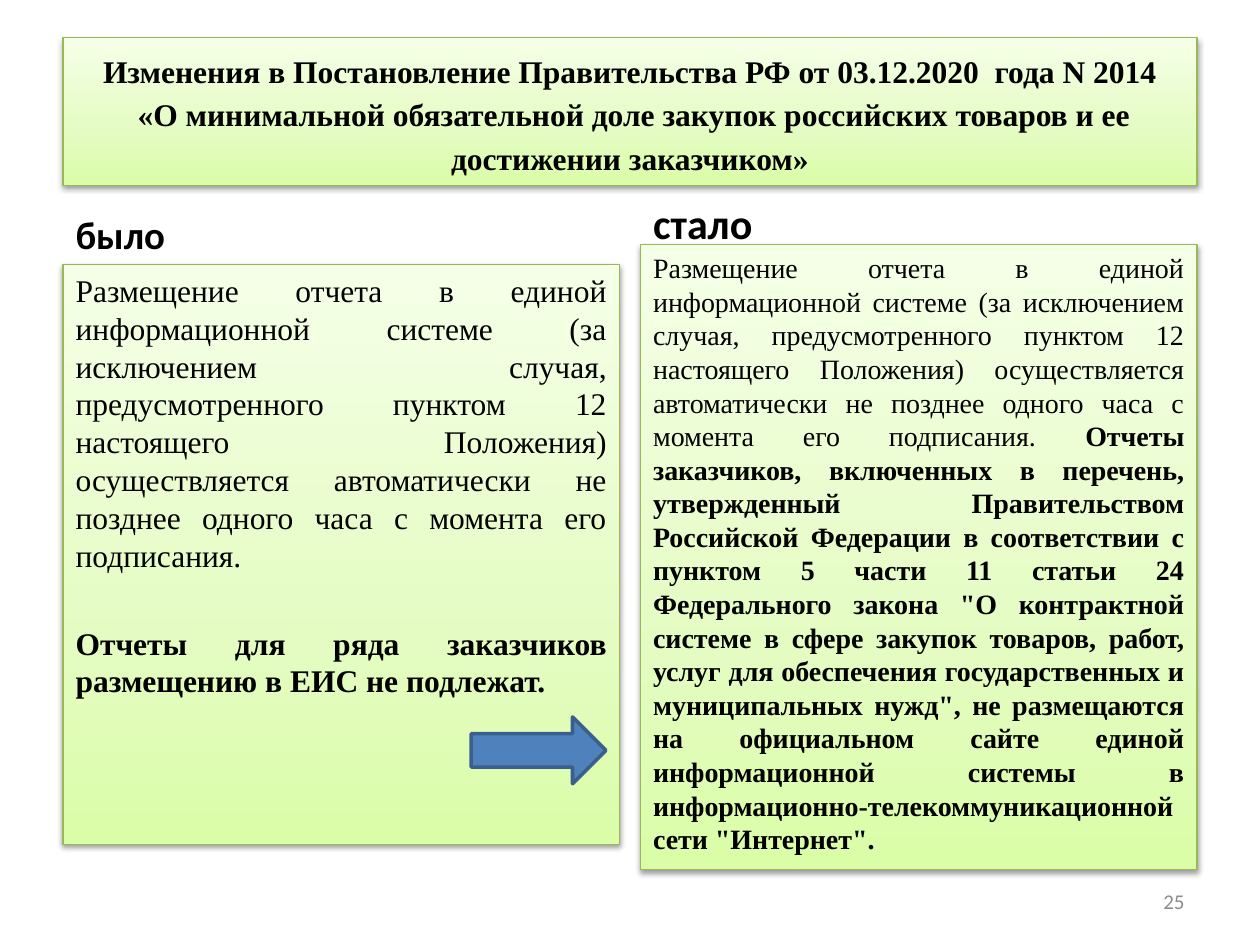
import copy

import lxml.etree
import pptx
import pptx.dml.color
import pptx.enum.shapes
import pptx.enum.text
import pptx.oxml.ns
from pptx.util import Pt

RGBColor = pptx.dml.color.RGBColor
BLACK = RGBColor(0x00, 0x00, 0x00)
GREY = RGBColor(0x8C, 0x8C, 0x8C)
BLUE = RGBColor(0x4F, 0x81, 0xBD)
DARK_BLUE = RGBColor(0x3A, 0x5F, 0x8C)
GREEN_LINE = RGBColor(0x98, 0xB9, 0x55)
GREEN_STOPS = [
    (0, RGBColor(0xDA, 0xFD, 0xA7)),
    (0.35, RGBColor(0xE4, 0xFC, 0xC2)),
    (1, RGBColor(0xF5, 0xFF, 0xE7)),
]

SERIF = "Times New Roman"
SANS = "Calibri"
ALIGN = pptx.enum.text.PP_ALIGN
ANCHOR = pptx.enum.text.MSO_ANCHOR
COMPARISON_LAYOUT = 4

LEFT, RIGHT = 36, 366
COLUMN_WIDTH = 318

TITLE = (
    "Изменения в Постановление Правительства РФ от 03.12.2020  года N 2014\v"
    " «О минимальной обязательной доле закупок российских товаров и ее "
    "достижении заказчиком»"
)
COMMON_RULE = (
    "Размещение отчета в единой информационной системе (за исключением случая, "
    "предусмотренного пунктом 12 настоящего Положения) осуществляется "
    "автоматически не позднее одного часа с момента его подписания."
)
OLD_EXCEPTION = "Отчеты для ряда заказчиков размещению в ЕИС не подлежат."
NEW_EXCEPTION = (
    "Отчеты заказчиков, включенных в перечень, утвержденный Правительством "
    "Российской Федерации в соответствии с пунктом 5 части 11 статьи 24 "
    'Федерального закона "О контрактной системе в сфере закупок товаров, работ, '
    'услуг для обеспечения государственных и муниципальных нужд", не размещаются '
    "на официальном сайте единой информационной системы в "
    'информационно-телекоммуникационной сети "Интернет".'
)


def place(shape, left, top, width, height):
    shape.left, shape.top = Pt(left), Pt(top)
    shape.width, shape.height = Pt(width), Pt(height)


def format_paragraph(paragraph, size, name, alignment, color=BLACK):
    paragraph.alignment = alignment
    paragraph.font.size = Pt(size)
    paragraph.font.name = name
    paragraph.font.color.rgb = color


def prepare_frame(shape, anchor):
    frame = shape.text_frame
    frame.word_wrap = True
    frame.auto_size = pptx.enum.text.MSO_AUTO_SIZE.NONE
    frame.vertical_anchor = anchor
    return frame


def style_green_panel(shape):
    """Give the shape a vertical green gradient, a thin outline and a soft shadow."""
    shape.fill.gradient()
    shape.fill.gradient_angle = 90
    properties = shape._element.spPr
    stop_list = properties.find(".//" + pptx.oxml.ns.qn("a:gsLst"))
    stop_list.append(copy.deepcopy(stop_list[-1]))
    for stop, (position, color) in zip(shape.fill.gradient_stops, GREEN_STOPS):
        stop.position = position
        stop.color.rgb = color
    shape.line.color.rgb = GREEN_LINE
    shape.line.width = Pt(0.75)

    shape.shadow.inherit = False
    qn = pptx.oxml.ns.qn
    shadow = lxml.etree.SubElement(
        properties.find(qn("a:effectLst")), qn("a:outerShdw"),
        blurRad=str(Pt(3.1)), dist=str(Pt(1.6)), dir="5400000", rotWithShape="0")
    color = lxml.etree.SubElement(shadow, qn("a:srgbClr"), val=str(BLACK))
    lxml.etree.SubElement(color, qn("a:alpha"), val="38000")


def remove_bullet(paragraph):
    properties = paragraph._p.get_or_add_pPr()
    properties.set("marL", "0")
    properties.set("indent", "0")
    lxml.etree.SubElement(properties, pptx.oxml.ns.qn("a:buNone"))


def fill_title(shape):
    place(shape, LEFT, 21.6, 648, 84.24)
    style_green_panel(shape)
    paragraph = prepare_frame(shape, ANCHOR.MIDDLE).paragraphs[0]
    paragraph.text = TITLE
    paragraph.line_spacing = 1.15
    format_paragraph(paragraph, 18, SERIF, ALIGN.CENTER)
    paragraph.font.bold = True


def fill_heading(shape, text, left, top, height, size):
    place(shape, left, top, COLUMN_WIDTH, height)
    paragraph = prepare_frame(shape, ANCHOR.BOTTOM).paragraphs[0]
    paragraph.text = text
    format_paragraph(paragraph, size, SANS, ALIGN.LEFT)
    paragraph.font.bold = True


def fill_panel(shape, paragraphs, left, top, height, size):
    """Write paragraphs, each a list of (text, bold) runs, into a green panel."""
    place(shape, left, top, COLUMN_WIDTH, height)
    style_green_panel(shape)
    frame = prepare_frame(shape, ANCHOR.TOP)
    for index, runs in enumerate(paragraphs):
        paragraph = frame.add_paragraph() if index else frame.paragraphs[0]
        if index:
            paragraph.space_before = Pt(28.7)
        for text, bold in runs:
            run = paragraph.add_run()
            run.text = text
            run.font.bold = bold
        remove_bullet(paragraph)
        format_paragraph(paragraph, size, SERIF, ALIGN.JUSTIFY)


def add_page_number(slide, number):
    box = slide.shapes.add_textbox(Pt(516), Pt(500.4), Pt(168), Pt(28.8))
    paragraph = prepare_frame(box, ANCHOR.MIDDLE).paragraphs[0]
    paragraph.text = number
    format_paragraph(paragraph, 12, SANS, ALIGN.RIGHT, GREY)


def add_arrow(slide):
    arrow = slide.shapes.add_shape(
        pptx.enum.shapes.MSO_SHAPE.RIGHT_ARROW,
        Pt(269.3), Pt(409.7), Pt(77), Pt(38.2))
    arrow.shadow.inherit = False
    arrow.fill.solid()
    arrow.fill.fore_color.rgb = BLUE
    arrow.line.color.rgb = DARK_BLUE
    arrow.line.width = Pt(2)


def main():
    presentation = pptx.Presentation()
    presentation.slide_width, presentation.slide_height = Pt(720), Pt(540)
    layout = presentation.slide_layouts[COMPARISON_LAYOUT]
    slide = presentation.slides.add_slide(layout)
    title, old_heading, old_panel, new_heading, new_panel = slide.placeholders

    fill_title(title)
    fill_heading(old_heading, "было", LEFT, 122.4, 28.1, 22.2)
    fill_panel(old_panel, [[(COMMON_RULE, False)], [(OLD_EXCEPTION, True)]],
               LEFT, 151.2, 331.2, 18)
    fill_heading(new_heading, "стало", RIGHT, 105.8, 39.6, 24)
    fill_panel(new_panel, [[(COMMON_RULE + " ", False), (NEW_EXCEPTION, True)]],
               RIGHT, 139.7, 357.1, 16)
    add_page_number(slide, "25")
    add_arrow(slide)
    presentation.save("out.pptx")


if __name__ == "__main__":
    main()
